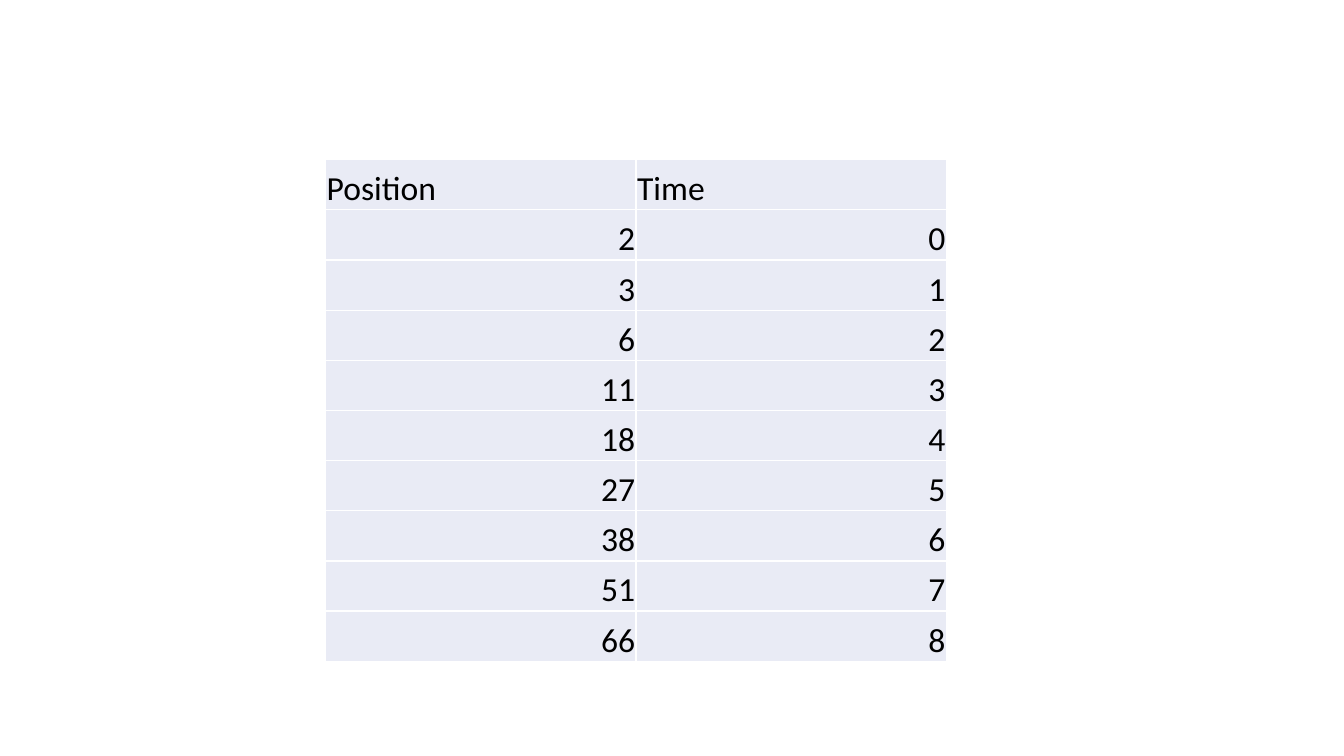
from dataclasses import dataclass

from lxml.etree import SubElement
from pptx import Presentation
from pptx.dml.color import RGBColor
from pptx.enum.text import MSO_ANCHOR, PP_ALIGN
from pptx.oxml.ns import qn
from pptx.slide import Slide
from pptx.table import _Cell
from pptx.util import Pt


@dataclass(frozen=True)
class Theme:
    font: str = "Calibri"
    text_size: Pt = Pt(24)
    text: RGBColor = RGBColor(0x00, 0x00, 0x00)
    cell_fill: RGBColor = RGBColor(0xE9, 0xEB, 0xF5)
    border: RGBColor = RGBColor(0xFF, 0xFF, 0xFF)
    border_width: Pt = Pt(1)


@dataclass(frozen=True)
class Column:
    heading: str
    values: tuple[int, ...]


THEME = Theme()
COLUMNS = (
    Column("Position", (2, 3, 6, 11, 18, 27, 38, 51, 66)),
    Column("Time", tuple(range(9))),
)
TABLE_LEFT, TABLE_TOP = Pt(232.6), Pt(114)
COLUMN_WIDTH, ROW_HEIGHT = Pt(221.75), Pt(35.85)
CELL_MARGIN = Pt(0.75)


def add_borders(cell: _Cell) -> None:
    """Outline all four sides; call before filling, as the schema puts borders first."""
    properties = cell._tc.get_or_add_tcPr()
    for side in ("a:lnL", "a:lnR", "a:lnT", "a:lnB"):
        line = SubElement(properties, qn(side), w=str(THEME.border_width))
        fill = SubElement(line, qn("a:solidFill"))
        SubElement(fill, qn("a:srgbClr"), val=str(THEME.border))


def write_cell(cell: _Cell, text: str, alignment: PP_ALIGN) -> None:
    add_borders(cell)
    cell.fill.solid()
    cell.fill.fore_color.rgb = THEME.cell_fill
    cell.vertical_anchor = MSO_ANCHOR.BOTTOM
    cell.margin_left = cell.margin_right = cell.margin_top = CELL_MARGIN
    cell.margin_bottom = Pt(0)
    cell.text = text
    paragraph = cell.text_frame.paragraphs[0]
    paragraph.alignment = alignment
    paragraph.font.name = THEME.font
    paragraph.font.size = THEME.text_size
    paragraph.font.color.rgb = THEME.text


def add_motion_table(slide: Slide, columns: tuple[Column, ...]) -> None:
    row_count = 1 + len(columns[0].values)
    table = slide.shapes.add_table(
        row_count, len(columns), TABLE_LEFT, TABLE_TOP,
        COLUMN_WIDTH * len(columns), ROW_HEIGHT * row_count,
    ).table
    table.first_row = False
    table.horz_banding = False
    for row in table.rows:
        row.height = ROW_HEIGHT
    for column_index, column in enumerate(columns):
        write_cell(table.cell(0, column_index), column.heading, PP_ALIGN.LEFT)
        for row_index, value in enumerate(column.values, start=1):
            write_cell(table.cell(row_index, column_index), str(value), PP_ALIGN.RIGHT)


def main() -> None:
    presentation = Presentation()
    presentation.slide_width, presentation.slide_height = Pt(960), Pt(540)
    blank_layout = presentation.slide_layouts.get_by_name("Blank")
    slide = presentation.slides.add_slide(blank_layout)
    add_motion_table(slide, COLUMNS)
    presentation.save("out.pptx")


if __name__ == "__main__":
    main()
